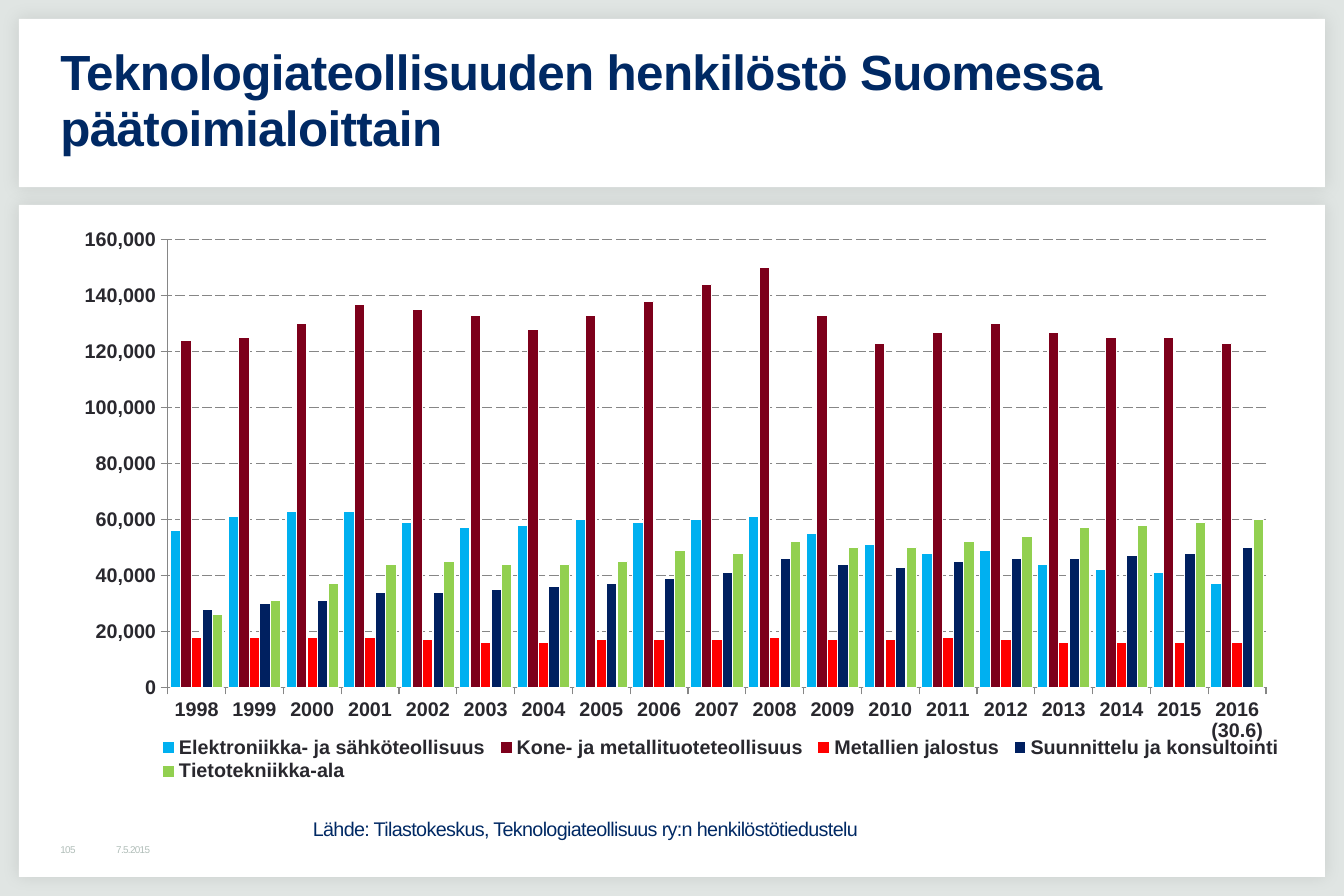
"""Build a slide with a clustered column chart of technology industry personnel in Finland by main sector."""
from lxml import etree
from pptx import Presentation
from pptx import util as u
from pptx.chart.data import CategoryChartData
from pptx.dml.color import RGBColor
from pptx.enum import chart as ch, dml, shapes, text
from pptx.oxml import parse_xml
from pptx.oxml.ns import nsdecls, qn

COLORS = {
    "background": "E0E5E3", "panel": "FFFFFF", "heading": "002964",
    "footer": "B1BEB9", "chart_text": "29282E", "axis": "868686",
}
SECTORS = [
    ("Elektroniikka- ja sähköteollisuus", "00B0F0",
     [56, 61, 63, 63, 59, 57, 58, 60, 59, 60, 61, 55, 51, 48, 49, 44, 42, 41, 37]),
    ("Kone- ja metallituoteteollisuus", "7D001B",
     [124, 125, 130, 137, 135, 133, 128, 133, 138, 144, 150, 133, 123, 127, 130, 127, 125, 125, 123]),
    ("Metallien jalostus", "FF0000",
     [18, 18, 18, 18, 17, 16, 16, 17, 17, 17, 18, 17, 17, 18, 17, 16, 16, 16, 16]),
    ("Suunnittelu ja konsultointi", "002060",
     [28, 30, 31, 34, 34, 35, 36, 37, 39, 41, 46, 44, 43, 45, 46, 46, 47, 48, 50]),
    ("Tietotekniikka-ala", "92D050",
     [26, 31, 37, 44, 45, 44, 44, 45, 49, 48, 52, 50, 50, 52, 54, 57, 58, 59, 60]),
]


def add_text(s, box, content, size, color, anchor, bold=False, spacing=1.0):
    """Add a one-paragraph text box."""
    tb = s.shapes.add_textbox(*[u.Inches(v) for v in box])
    tf = tb.text_frame
    tf.word_wrap = True
    tf.vertical_anchor = anchor
    tf.margin_left = tf.margin_right = tf.margin_top = tf.margin_bottom = u.Inches(0.04)
    tf.text = content
    p = tf.paragraphs[0]
    p.line_spacing = spacing
    r = p.runs[0]
    r.font.name = "Arial"
    r.font.size = u.Pt(size)
    r.font.bold = bold
    r.font.color.rgb = RGBColor.from_string(COLORS[color])
    r.font._element.set("spc", "-40")


def set_layout(parent, index, target, box):
    """Place a chart part by fractions of the chart area."""
    for old in parent.findall(qn("c:layout")):
        parent.remove(old)
    inner = f'<c:layoutTarget val="{target}"/>' if target else ""
    modes = '<c:xMode val="edge"/><c:yMode val="edge"/>'
    sizes = "".join(f'<c:{k} val="{v}"/>' for k, v in zip("xywh", box))
    parent.insert(index, parse_xml(
        f'<c:layout {nsdecls("c")}><c:manualLayout>{inner}{modes}{sizes}</c:manualLayout></c:layout>'))


prs = Presentation()
prs.slide_width = u.Inches(11.34)
prs.slide_height = u.Inches(7.56)
s = prs.slides.add_slide(prs.slide_layouts[6])
s.background.fill.solid()
s.background.fill.fore_color.rgb = RGBColor.from_string(COLORS["background"])

for top, height in [(0.16, 1.42), (1.73, 5.67)]:
    sp = s.shapes.add_shape(shapes.MSO_SHAPE.RECTANGLE, u.Inches(0.16), u.Inches(top),
                            u.Inches(11.02), u.Inches(height))
    sp.fill.solid()
    sp.fill.fore_color.rgb = RGBColor.from_string(COLORS["panel"])
    sp.line.fill.background()
    sp.shadow.inherit = False
    effects = sp._element.spPr.find(qn("a:effectLst"))
    shadow = etree.SubElement(effects, qn("a:outerShdw"), blurRad=str(u.Pt(10)), dist="0",
                              dir="2700000", algn="ctr", rotWithShape="0")
    black = etree.SubElement(shadow, qn("a:srgbClr"), val="000000")
    etree.SubElement(black, qn("a:alpha"), val="10000")

data = CategoryChartData(number_format="#,##0")
data.categories = [str(year) for year in range(1998, 2016)] + ["2016 (30.6)"]
for name, color, thousands in SECTORS:
    data.add_series(name, [v * 1000 for v in thousands])
chart = s.shapes.add_chart(ch.XL_CHART_TYPE.COLUMN_CLUSTERED, u.Inches(0.47), u.Inches(1.89),
                           u.Inches(10.39), u.Inches(4.73), data).chart
chart.has_title = False
chart.font.name = "Arial"
chart.font.size = u.Pt(12)
chart.font.bold = True
chart.font.color.rgb = RGBColor.from_string(COLORS["chart_text"])

plot = chart.plots[0]
plot.gap_width = 50
plot.overlap = 0
plot.vary_by_categories = False
for series, (name, color, thousands) in zip(plot.series, SECTORS):
    series.format.fill.solid()
    series.format.fill.fore_color.rgb = RGBColor.from_string(color)
    series.format.line.color.rgb = RGBColor.from_string(COLORS["panel"])
    series.format.line.width = u.Pt(0.75)

values = chart.value_axis
values.minimum_scale = 0
values.maximum_scale = 160000
values.major_unit = 20000
values.tick_labels.number_format = "#,##0"
values.tick_labels.number_format_is_linked = False
values.has_major_gridlines = True
grid = values.major_gridlines.format.line
grid.dash_style = dml.MSO_LINE.LONG_DASH
for line in (grid, values.format.line, chart.category_axis.format.line):
    line.color.rgb = RGBColor.from_string(COLORS["axis"])
    line.width = u.Pt(0.75)
for axis in (values, chart.category_axis):
    axis.major_tick_mark = ch.XL_TICK_MARK.OUTSIDE

chart.has_legend = True
legend = chart.legend
legend.position = ch.XL_LEGEND_POSITION.BOTTOM
legend.include_in_layout = False
legend.font.size = u.Pt(12)
legend.font.bold = True
set_layout(plot._element.getparent(), 0, "inner", (0.091, 0.028, 0.892, 0.799))
set_layout(legend._element, 1, None, (0.08, 0.91, 0.92, 0.1))

middle, top = text.MSO_ANCHOR.MIDDLE, text.MSO_ANCHOR.TOP
add_text(s, (0.94, 7.09, 1.42, 0.16), "7.5.2015", 6, "footer", middle)
add_text(s, (0.47, 7.09, 0.47, 0.16), "105", 6, "footer", middle)
add_text(s, (0.47, 0.31, 10.4, 1.1), "Teknologiateollisuuden henkilöstö Suomessa päätoimialoittain",
         30, "heading", middle, bold=True, spacing=0.95)
add_text(s, (2.6, 6.85, 5.67, 0.28), "Lähde: Tilastokeskus, Teknologiateollisuus ry:n henkilöstötiedustelu",
         12, "heading", top)

prs.save("out.pptx")
